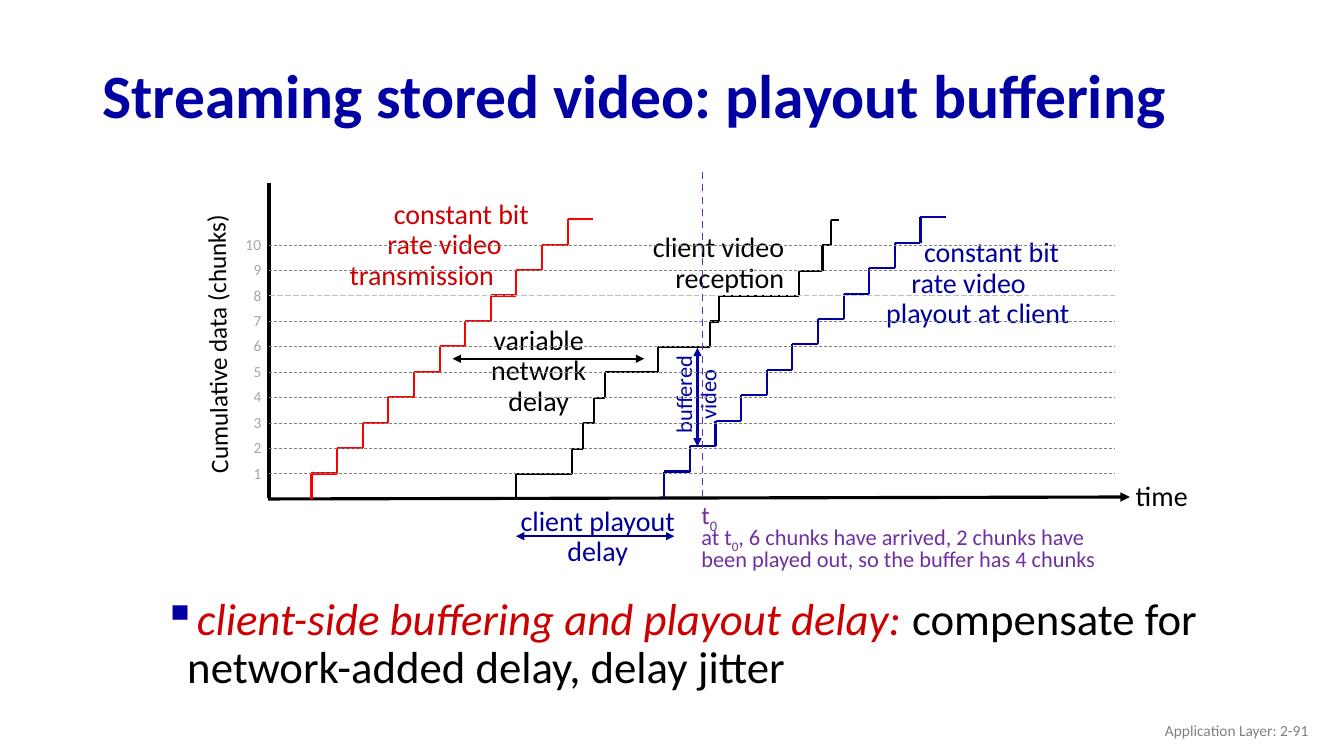
"""Build the slide that explains playout buffering for streamed stored video."""
import pptx
import pptx.dml.color
import pptx.enum.dml
import pptx.enum.shapes
import pptx.enum.text
import pptx.oxml
import pptx.oxml.ns
import pptx.util

Pt = pptx.util.Pt
hex_color = pptx.dml.color.RGBColor.from_string
ALIGN = pptx.enum.text.PP_ALIGN
ANCHOR = pptx.enum.text.MSO_ANCHOR
DASH = pptx.enum.dml.MSO_LINE
NAMESPACE = pptx.oxml.ns.nsdecls("a")

NAVY, BLUE, RED, PURPLE, BLACK = "0000A3", "000099", "CC0000", "7030A0", "000000"
STEP = 18.16
CHUNKS = 10

deck = pptx.Presentation()
deck.slide_width, deck.slide_height = Pt(960), Pt(540)
page = deck.slides.add_slide(deck.slide_layouts[6])


def add_line(start, end, color, width=1.5, heads=(), dash=None):
    line = page.shapes.add_connector(
        pptx.enum.shapes.MSO_CONNECTOR.STRAIGHT, *map(Pt, start + end))
    line.line.color.rgb = hex_color(color)
    line.line.width = Pt(width)
    line.line.dash_style = dash
    for head in heads:
        line.line._get_or_add_ln().append(
            pptx.oxml.parse_xml(f'<a:{head} {NAMESPACE} type="triangle"/>'))
    line._element.spPr.append(pptx.oxml.parse_xml(f"<a:effectLst {NAMESPACE}/>"))


def add_text(place, paragraphs, size, color, align=ALIGN.LEFT, spacing=0.9,
             anchor=ANCHOR.TOP, wrap=True, rotation=0, indents=(), bullet=None):
    box = page.shapes.add_textbox(*map(Pt, place))
    box.rotation = rotation
    box.text_frame.word_wrap = wrap
    box.text_frame.vertical_anchor = anchor
    for index, spans in enumerate(paragraphs):
        para = box.text_frame.paragraphs[0] if index == 0 else box.text_frame.add_paragraph()
        para.alignment, para.line_spacing = align, spacing
        properties = para._p.get_or_add_pPr()
        if indents:
            properties.set("marL", str(Pt(indents[index])))
        if bullet:
            properties.set("indent", str(Pt(-17)))
            for tag in (f'<a:buClr {NAMESPACE}><a:srgbClr val="{NAVY}"/></a:buClr>',
                        f'<a:buChar {NAMESPACE} char="{bullet}"/>'):
                properties.append(pptx.oxml.parse_xml(tag))
        for words, changes in [(spans, {})] if isinstance(spans, str) else spans:
            span = para.add_run()
            span.text = words
            span.font.color.rgb = hex_color(changes.get("color", color))
            formats = {"name": "Calibri", "size": Pt(size),
                       "bold": changes.get("bold"), "italic": changes.get("italic")}
            for name, value in formats.items():
                setattr(span.font, name, value)
            if "baseline" in changes:
                span._r.get_or_add_rPr().set("baseline", changes["baseline"])


SUBSCRIPT_ZERO = ("0", {"baseline": "-25000"})
BOTH_HEADS = ("headEnd", "tailEnd")

add_text((66.2, 35.3, 828, 70.6),
         [[("Streaming stored video: playout buffering", {"bold": True})]],
         44, NAVY, anchor=ANCHOR.MIDDLE)

add_line((192.2, 131), (192.2, 355.7), BLACK, 2.25)
add_line((807.1, 355), (191.5, 356.4), BLACK, 2.25, heads=("headEnd",))
add_text((48.2, 223.9, 216, 26.6), ["Cumulative data (chunks)"], 18, BLACK, rotation=269.4)
add_text((804.2, 341.3, 52.6, 28.8), ["time"], 20, BLACK, wrap=False)

even_steps = [18.3 * step for step in range(CHUNKS + 2)]
reception_times = [368.6, 408.6, 416.2, 424.1, 432, 470, 507, 513.4, 570.5, 587.5, 593.3, 599]
staircases = [
    ("FF0000", 356.4, [222.5 + offset for offset in even_steps]),
    (BLACK, 356.8, reception_times),
    (NAVY, 355, [474.5 + offset for offset in even_steps]),
]
for color, base, times in staircases:
    for chunk, (arrival, following) in enumerate(zip(times, times[1:])):
        bottom = base - chunk * STEP
        top = bottom - STEP
        add_line((arrival, top), (arrival, bottom), color)
        add_line((following, top), (arrival, top), color)

add_text((242.6, 139.7, 148.3, 72.7), ["constant bit", "rate video", "transmission"],
         20, RED, indents=(31.6, 27.1, 0))
add_text((343.4, 229.7, 82.8, 72.7), ["variable", "network", "delay"],
         20, BLACK, ALIGN.CENTER, wrap=False)
add_line((323.3, 256.3), (460.1, 256.3), BLACK, heads=BOTH_HEADS)
add_text((457.9, 163.4, 109.4, 51.1), ["client video", "reception"],
         20, BLACK, ALIGN.RIGHT, wrap=False)
add_text((621.4, 167, 158, 72.7), ["constant bit", "rate video", "playout at client"],
         20, BLUE, indents=(31.6, 22.6, 4.5))
add_text((360.7, 358.6, 132.5, 51.1), ["client playout", "delay"], 20, BLUE, ALIGN.CENTER)
add_line((368.6, 383), (481.7, 383), "010086", heads=BOTH_HEADS)
add_line((498.2, 319), (498.2, 248.4), NAVY, heads=BOTH_HEADS)
add_text((463, 260.6, 70.6, 42.5), ["buffered", "video"],
         16, NAVY, ALIGN.CENTER, wrap=False, rotation=270)

add_text((98.6, 422.6, 828, 69.8),
         [[("client-side buffering and playout delay: ", {"color": RED, "italic": True}),
           ("compensate for network-added delay, delay jitter", {})]],
         32, BLACK, indents=(28.1,), bullet="▪")
add_text((725.8, 507.6, 216, 28.8), ["Application Layer: 2-91"],
         11, "808080", ALIGN.RIGHT, spacing=1, anchor=ANCHOR.MIDDLE)

for chunk in range(1, CHUNKS + 1):
    level = 356.6 - chunk * STEP
    grid_color, grid_dash = ("BFBFBF", DASH.LONG_DASH) if chunk == 8 else ("808080", DASH.DASH)
    add_line((192.5, level), (796.5, level), grid_color, 0.5, dash=grid_dash)
    width = 20.2 if chunk < 10 else 25.9
    add_text((194.2 - width, level - 10.8, width, 20.9), [str(chunk)],
             11, "A6A6A6", spacing=1, wrap=False)

add_line((501.8, 355), (501.8, 121), PURPLE, 1.25, dash=DASH.DASH)
add_text((493.9, 372.2, 300.2, 38.9),
         [[("at t", {}), SUBSCRIPT_ZERO,
           (", 6 chunks have arrived, 2 chunks have been played out, "
            "so the buffer has 4 chunks", {})]],
         16, PURPLE, spacing=0.8)
add_text((493.9, 355.7, 36.7, 25.2), [[("t", {}), SUBSCRIPT_ZERO]], 18, PURPLE, spacing=0.8)

deck.save("out.pptx")
